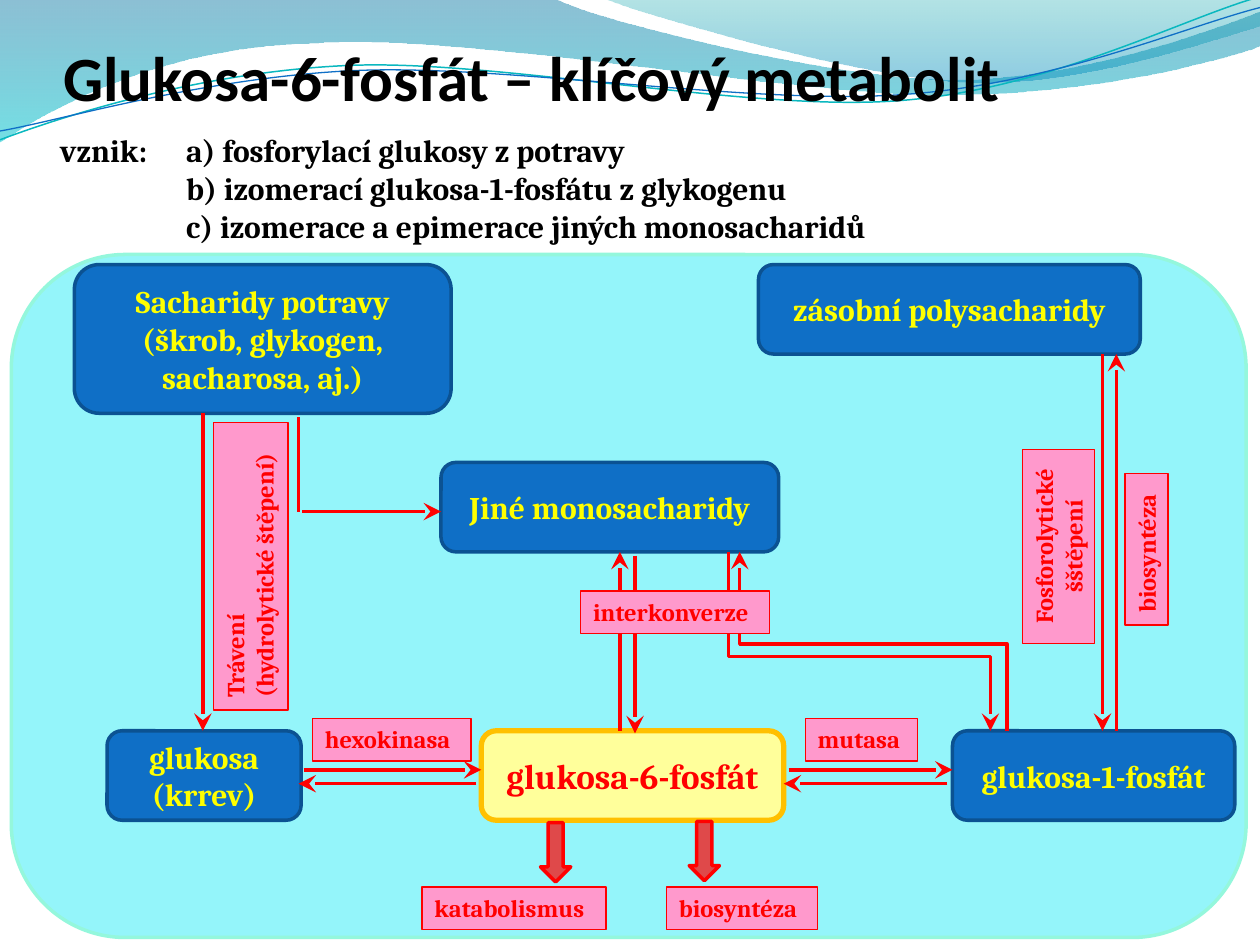
from lxml.etree import SubElement
from pptx import Presentation
from pptx.dml.color import RGBColor
from pptx.enum.shapes import MSO_CONNECTOR as Link, MSO_SHAPE as Kind
from pptx.enum.text import MSO_ANCHOR as Anchor, MSO_AUTO_SIZE as Auto, PP_ALIGN as Align
from pptx.oxml.ns import qn
from pptx.util import Inches, Pt

HUES = {
    "black": "000000", "red": "FF0000", "yellow": "FFFF00", "pink": "FF99CC",
    "blue": "0F6FC6", "navy": "0B5292", "cream": "FFFF9B", "gold": "FFC000",
    "cyan": "94F5FA", "mint": "94F7DC", "teal": "0AB8BF",
    "deep": "0074A1", "aqua": "00C6CF", "sea": "00A1A9", "sky": "008BBF",
}


def hue(name):
    """Return the named colour."""
    return RGBColor.from_string(HUES[name])


def write(frame, text, font="Cambria", size=18, color="black", align=Align.LEFT,
          anchor=Anchor.TOP, inset=(0.1, 0.05, 0.1, 0.05), tab=None):
    """Fill a text frame with bold text, one paragraph a line."""
    frame.text = text
    frame.word_wrap = True
    frame.auto_size = Auto.NONE
    frame.vertical_anchor = anchor
    (frame.margin_left, frame.margin_top,
     frame.margin_right, frame.margin_bottom) = map(Inches, inset)
    for para in frame.paragraphs:
        para.alignment = align
        if tab:
            props = para._p.get_or_add_pPr()
            stop = SubElement(SubElement(props, qn("a:tabLst")), qn("a:tab"))
            stop.set("pos", str(Inches(tab)))
            stop.set("algn", "l")
        face = para.font
        face.name, face.size, face.bold = font, Pt(size), True
        face.color.rgb = hue(color)


def curve(shape, parts):
    """Join each three line ends of a curved part into one cubic curve."""
    legs = shape._element.spPr.iter(qn("a:lnTo"))
    legs = iter(list(legs))
    for part in parts:
        trio = [next(legs) for _ in range(len(part) // 2)]
        if len(trio) == 3:
            cubic = trio[0].makeelement(qn("a:cubicBezTo"))
            trio[0].addprevious(cubic)
            for leg in trio:
                cubic.append(leg[0])
                leg.getparent().remove(leg)


def fade(shape, *shares):
    """Set the opacity in percent of each fill colour."""
    for node, share in zip(shape._element.spPr.iter(qn("a:srgbClr")), shares):
        SubElement(node, qn("a:alpha")).set("val", str(share * 1000))


class Board:
    """Holds the slide and the style of its parts."""

    def __init__(self, deck):
        """Add a slide that has only a title."""
        self.slide = deck.slides.add_slide(deck.slide_layouts[5])
        self.shapes = self.slide.shapes

    def wave(self, start, parts, line=None, width=1, grad=None):
        """Draw a curved band with a gradient, or a curved line."""
        pen = self.shapes.build_freeform(*map(Inches, start))
        pen.add_line_segments([(Inches(part[i]), Inches(part[i + 1])) for part in parts
                               for i in range(0, len(part), 2)], close=bool(grad))
        shape = pen.convert_to_shape()
        curve(shape, parts)
        shape.shadow.inherit = False
        if grad:
            shape.fill.gradient()
            shape.fill.gradient_angle = 270
            for stop, (name, _) in zip(shape.fill.gradient_stops, grad):
                stop.color.rgb = hue(name)
            fade(shape, *(share for _, share in grad))
            shape.line.fill.background()
        else:
            shape.fill.background()
            shape.line.color.rgb = hue(line)
            shape.line.width = Pt(width)

    def title(self, text, box):
        """Place the title above what is drawn so far."""
        shape = self.shapes.title
        shape.left, shape.top, shape.width, shape.height = map(Inches, box)
        write(shape.text_frame, text, font="Calibri", size=36,
              anchor=Anchor.BOTTOM, inset=(0, 0.05, 0, 0))
        self.shapes._spTree.append(shape._element)

    def note(self, text, box):
        """Add plain text with a tab stop."""
        write(self.shapes.add_textbox(*map(Inches, box)).text_frame, text, tab=1)

    def shape(self, kind, box, fill, line, width):
        """Add a preset shape."""
        shape = self.shapes.add_shape(kind, *map(Inches, box))
        shape.shadow.inherit = False
        shape.fill.solid()
        shape.fill.fore_color.rgb = hue(fill)
        shape.line.color.rgb = hue(line)
        shape.line.width = Pt(width)
        return shape

    def node(self, text, box, fill="blue", line="navy", width=2, color="yellow", size=18):
        """Add a rounded box for a substance."""
        shape = self.shape(Kind.ROUNDED_RECTANGLE, box, fill, line, width)
        write(shape.text_frame, text, size=size, color=color,
              align=Align.CENTER, anchor=Anchor.MIDDLE)

    def label(self, text, box, turn=0, align=Align.LEFT):
        """Add a pink label for a process."""
        shape = self.shape(Kind.RECTANGLE, box, "pink", "red", 0.75)
        shape.rotation = turn
        write(shape.text_frame, text, size=14, color="red", align=align)

    def block(self, x, y):
        """Add a thick arrow that points down."""
        fade(self.shape(Kind.DOWN_ARROW, (x, y, 0.24, 0.47), "red", "red", 2), 70)

    def arrow(self, x1, y1, x2, y2, tip="tailEnd", kind=Link.STRAIGHT):
        """Add a red line with a tip at one end."""
        line = self.shapes.add_connector(kind, *map(Inches, (x1, y1, x2, y2)))
        line.line.color.rgb = hue("red")
        line.line.width = Pt(2)
        props = line._element.spPr
        if tip:
            end = SubElement(props.find(qn("a:ln")), qn("a:" + tip))
            for key, val in (("type", "stealth"), ("w", "lg"), ("len", "lg")):
                end.set(key, val)
        SubElement(props, qn("a:effectLst"))
        return line

    def bend(self, x1, y1, x2, y2, mid, tip):
        """Add an arrow that runs down, across at mid, and down."""
        line = self.arrow(x1, y1, x2, y2, tip, Link.ELBOW)
        wide, high = y2 - y1, x2 - x1
        line.left, line.top = Inches((x1 + x2 - wide) / 2), Inches((y1 + y2 - high) / 2)
        line.width, line.height = Inches(wide), Inches(high)
        props = line._element.spPr
        frame = props.find(qn("a:xfrm"))
        frame.set("rot", "16200000")
        frame.set("flipH", "1")
        shape = props.find(qn("a:prstGeom"))
        table = shape.find(qn("a:avLst"))
        if table is None:
            table = SubElement(shape, qn("a:avLst"))
        guide = SubElement(table, qn("a:gd"))
        guide.set("name", "adj1")
        guide.set("fmla", f"val {round((mid - y1) / wide * 100000)}")


def main():
    """Build the slide."""
    deck = Presentation()
    deck.slide_width, deck.slide_height = Inches(10), Inches(7.5)
    board = Board(deck)
    board.wave((0, 0), [(4.4, -0.01), (4.76, 0.17, 6.64, 0.63, 7.58, 0.63),
                        (8.53, 0.63, 9.58, 0.26, 10, 0.09), (10.01, 0.36),
                        (9.83, 0.44, 8.7, 0.76, 7.46, 0.75),
                        (6.22, 0.75, 3.82, 0.28, 2.57, 0.34),
                        (1.29, 0.36, 0.46, 0.83, -0.01, 1.13)],
               grad=[("deep", 45), ("aqua", 55)])
    board.wave((4.79, -0.01), [(5.09, 0.11, 6.82, 0.62, 7.69, 0.65),
                               (8.56, 0.69, 9.61, 0.32, 10, 0.21), (10, 0)],
               grad=[("sea", 30), ("sky", 45)])
    board.wave((0, 1.11), [(0.48, 0.93, 1.58, 0.57, 2.77, 0.52),
                           (3.95, 0.47, 5.93, 0.89, 7.13, 0.8),
                           (8.33, 0.71, 9.38, 0.15, 9.98, -0.02)], "teal", 0.85)
    board.wave((0, 1.04), [(0.47, 0.96, 1.64, 0.61, 2.83, 0.56),
                           (4.03, 0.51, 5.97, 0.84, 7.17, 0.75),
                           (8.36, 0.67, 9.41, 0.21, 10, 0.06)], "blue", 0.75)
    board.shape(Kind.ROUNDED_RECTANGLE, (0.09, 2.02, 9.8, 5.42), "cyan", "mint", 2)
    board.title("Glukosa-6-fosfát – klíčový metabolit", (0.5, 0.13, 9, 0.78))
    board.note("vznik:\ta) fosforylací glukosy z potravy\n"
               "\tb) izomerací glukosa-1-fosfátu z glykogenu\n"
               "\tc) izomerace a epimerace jiných monosacharidů", (0.38, 0.99, 6.9, 1.31))

    board.node("Jiné monosacharidy", (3.5, 3.67, 2.68, 0.71))
    board.node("Sacharidy potravy\n(škrob, glykogen, sacharosa, aj.)", (0.59, 2.1, 2.99, 1.18))
    board.node("zásobní polysacharidy", (6.02, 2.1, 3.03, 0.71))
    board.node("glukosa\n(krrev)", (0.85, 5.8, 1.54, 0.71))
    board.node("glukosa-6-fosfát", (3.82, 5.8, 2.4, 0.71), "cream", "gold", 3, "red", 20)
    board.node("glukosa-1-fosfát", (7.56, 5.8, 2.24, 0.71))

    for ends in [(1.61, 3.28, 1.61, 5.8), (4.92, 5.8, 4.92, 4.38), (5.04, 4.41, 5.04, 5.82),
                 (8.75, 2.81, 8.75, 5.8), (8.86, 5.8, 8.86, 2.81),
                 (2.41, 6.11, 3.82, 6.11), (3.78, 6.22, 2.37, 6.22),
                 (6.26, 6.11, 7.56, 6.11), (7.52, 6.22, 6.22, 6.22),
                 (2.4, 4.06, 3.5, 4.06)]:
        board.arrow(*ends)
    board.arrow(2.37, 3.31, 2.37, 4.06, tip=None)
    board.bend(5.87, 4.38, 7.99, 5.8, 5.11, "headEnd")
    board.bend(5.78, 4.38, 7.86, 5.8, 5.21, "tailEnd")
    board.block(4.29, 6.53)
    board.block(5.47, 6.52)

    for text, x, y, wide in [("hexokinasa", 2.48, 5.7, 1.26), ("mutasa", 6.39, 5.7, 0.89),
                             ("katabolismus", 3.35, 7.04, 1.46),
                             ("biosyntéza", 5.29, 7.04, 1.2),
                             ("interkonverze", 4.61, 4.69, 1.5)]:
        board.label(text, (x, y, wide, 0.34))
    board.label("Trávení\n(hydrolytické štěpení)", (0.85, 4.2, 2.28, 0.59), 270)
    board.label("Fosforolytické šštěpení", (7.63, 4.05, 1.54, 0.57), 270, Align.CENTER)
    board.label("biosyntéza", (8.5, 4.19, 1.2, 0.34), 270)
    deck.save("out.pptx")


if __name__ == "__main__":
    main()
